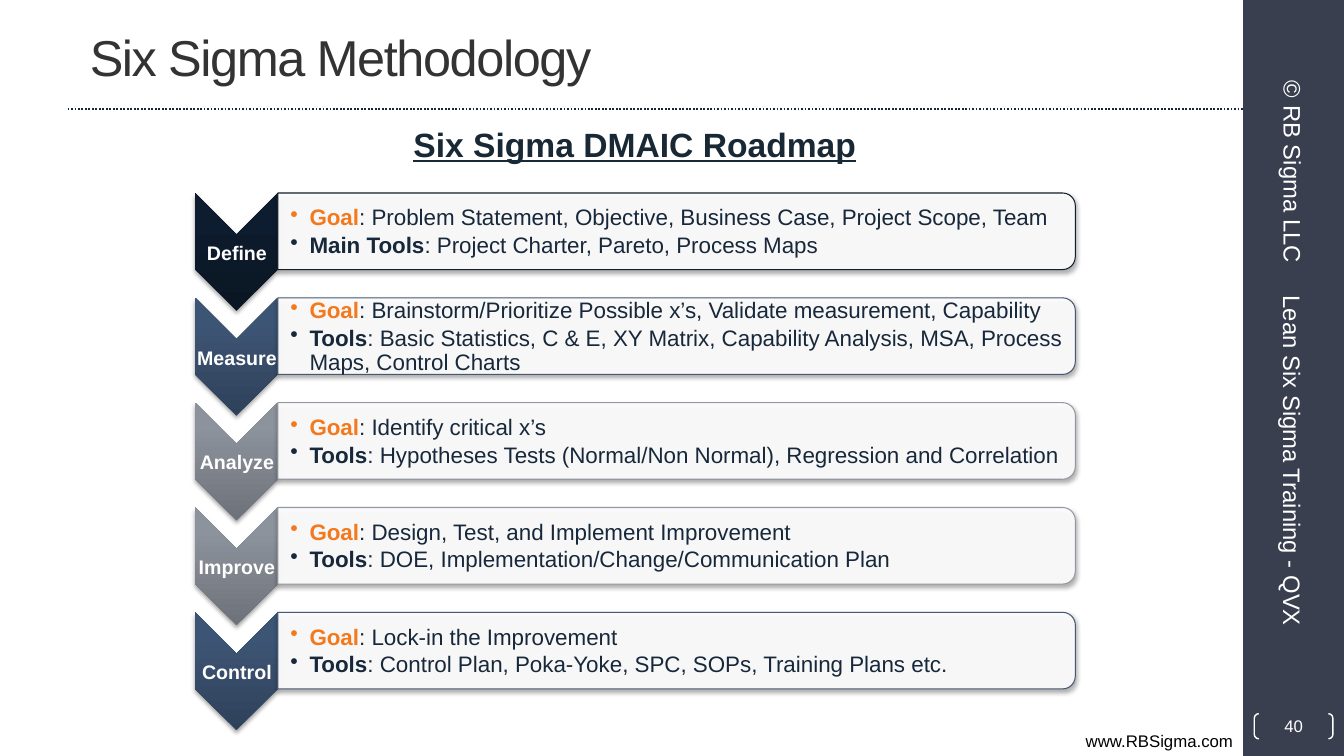
from lxml import etree
from pptx import Presentation
from pptx.dml.color import RGBColor
from pptx.enum.dml import MSO_LINE
from pptx.enum.shapes import MSO_CONNECTOR, MSO_SHAPE as SHAPE
from pptx.enum.text import MSO_ANCHOR as ANCHOR, PP_ALIGN as ALIGN
from pptx.oxml import parse_xml
from pptx.oxml.ns import nsdecls, qn
from pptx.util import Inches, Pt

COLORS = {
    "white": "FFFFFF", "black": "000000", "sidebar": "393F4E", "rule": "17273B",
    "title": "333333", "heading": "182835", "goal": "F4791D", "body": "18283B",
}

# Chevron gradient stops at 0, 80 and 100 percent, then the card outline
THEMES = {
    "navy": (("0A1623", "0D1C2E", "0D1C2F"), "121E2C"),
    "blue": (("2F415A", "3D5575", "3D5577"), "465872"),
    "gray": (("6D7179", "8D939D", "8E949E"), "9498A0"),
}

# Phase, theme, goal, tools label, tools
PHASES = [
    ("Define", "navy", "Problem Statement, Objective, Business Case, Project Scope, Team",
     "Main Tools", "Project Charter, Pareto, Process Maps"),
    ("Measure", "blue", "Brainstorm/Prioritize Possible x’s, Validate measurement, Capability",
     "Tools", "Basic Statistics, C & E, XY Matrix, Capability Analysis, MSA, Process Maps, Control Charts"),
    ("Analyze", "gray", "Identify critical x’s",
     "Tools", "Hypotheses Tests (Normal/Non Normal), Regression and Correlation"),
    ("Improve", "gray", "Design, Test, and Implement Improvement",
     "Tools", "DOE, Implementation/Change/Communication Plan"),
    ("Control", "blue", "Lock-in the Improvement",
     "Tools", "Control Plan, Poka-Yoke, SPC, SOPs, Training Plans etc."),
]
PHASE_PITCH = 1.04


def rgb(color):
    return RGBColor.from_string(COLORS.get(color, color))


def add_run(paragraph, text, size, color, **font_format):
    run = paragraph.add_run()
    run.text = text
    run.font.color.rgb = rgb(color)
    for name, value in {"name": "Arial", "size": Pt(size), **font_format}.items():
        setattr(run.font, name, value)
    return run


def set_frame(shape, anchor, margins):
    frame = shape.text_frame
    frame.word_wrap = True
    frame.vertical_anchor = anchor
    for side, margin in zip(("left", "top", "right", "bottom"), margins):
        setattr(frame, f"margin_{side}", Inches(margin))
    return frame


def add_box(slide, box, anchor=ANCHOR.MIDDLE, margins=(0.1, 0.05, 0.1, 0.05), rotation=0):
    shape = slide.shapes.add_textbox(*map(Inches, box))
    shape.rotation = rotation
    return set_frame(shape, anchor, margins)


def add_label(slide, box, text, size, color, align=ALIGN.LEFT, bold=False, underline=False, **frame_format):
    paragraph = add_box(slide, box, **frame_format).paragraphs[0]
    paragraph.alignment = align
    return add_run(paragraph, text, size, color, bold=bold, underline=underline)


def add_shape(slide, kind, box, fill=None, line=None, line_width=1, rotation=0):
    shape = slide.shapes.add_shape(kind, *map(Inches, box))
    shape.shadow.inherit = False
    shape.rotation = rotation
    if fill:
        shape.fill.solid()
        shape.fill.fore_color.rgb = rgb(fill)
    else:
        shape.fill.background()
    if line:
        shape.line.color.rgb = rgb(line)
        shape.line.width = Pt(line_width)
    else:
        shape.line.fill.background()
    return shape


def add_soft_shadow(shape):
    effects = shape._element.spPr.find(qn("a:effectLst"))
    effects.append(parse_xml(
        f'<a:outerShdw {nsdecls("a")} blurRad="40000" dist="23000" dir="5400000" rotWithShape="0">'
        '<a:srgbClr val="000000"><a:alpha val="35000"/></a:srgbClr></a:outerShdw>'))


def set_gradient(shape, colors):
    stops = "".join(f'<a:gs pos="{position}"><a:srgbClr val="{color}"/></a:gs>'
                    for position, color in zip((0, 80000, 100000), colors))
    properties = shape._element.spPr
    properties.replace(properties.find(qn("a:noFill")), parse_xml(
        f'<a:gradFill {nsdecls("a")} rotWithShape="0"><a:gsLst>{stops}</a:gsLst>'
        '<a:lin ang="16200000" scaled="0"/></a:gradFill>'))


def add_bullet(paragraph, label, label_color, text):
    properties = paragraph._p.get_or_add_pPr()
    properties.set("marL", str(Inches(0.19)))
    properties.set("indent", str(-Inches(0.19)))
    etree.SubElement(properties, qn("a:buChar")).set("char", "•")
    paragraph.level = 1
    paragraph.line_spacing = 0.9
    paragraph.space_after = Pt(2.4)
    add_run(paragraph, label, 16, label_color, bold=True)
    add_run(paragraph, f": {text}", 16, "body", bold=False)


def add_phase(slide, offset, phase, theme, goal, tools_label, tools):
    gradient, outline = THEMES[theme]
    # Chevron with its name
    chevron = add_shape(slide, SHAPE.CHEVRON, (1.76, 2.09 + offset, 1.17, 0.82), rotation=90)
    set_gradient(chevron, gradient)
    add_soft_shadow(chevron)
    add_label(slide, (1.94, 2.33 + offset, 0.82, 0.35), phase, 14, "white",
              ALIGN.CENTER, bold=True, margins=(0.01,) * 4)
    # Card with the goal and tools
    card = add_shape(slide, SHAPE.ROUND_2_SAME_RECTANGLE, (6.33, -1.66 + offset, 0.76, 7.91),
                     "white", outline, 0.75, rotation=90)
    fill_color = card._element.spPr.find(qn("a:solidFill"))[0]
    etree.SubElement(fill_color, qn("a:alpha")).set("val", "90000")
    add_soft_shadow(card)
    frame = add_box(slide, (2.76, 1.96 + offset, 7.87, 0.69), margins=(0.12, 0.01, 0.01, 0.01))
    add_bullet(frame.paragraphs[0], "Goal", "goal", goal)
    add_bullet(frame.add_paragraph(), tools_label, "body", tools)


def add_rule(slide):
    rule = slide.shapes.add_connector(MSO_CONNECTOR.STRAIGHT, *map(Inches, (0.67, 1.08, 12.33, 1.08)))
    rule.line.color.rgb = rgb("rule")
    rule.line.width = Pt(1.25)
    rule.line.dash_style = MSO_LINE.ROUND_DOT
    etree.SubElement(rule._element.spPr, qn("a:effectLst"))


def add_page_number(slide, number):
    bracket = add_shape(slide, SHAPE.DOUBLE_BRACKET, (12.44, 7.08, 0.78, 0.25), line="white")
    bracket.adjustments[0] = 0.18
    paragraph = set_frame(bracket, ANCHOR.MIDDLE, (0,) * 4).paragraphs[0]
    paragraph.alignment = ALIGN.CENTER
    add_run(paragraph, number, 12, "white")


def main():
    presentation = Presentation()
    presentation.slide_width = Inches(13.33)
    presentation.slide_height = Inches(7.5)
    slide = presentation.slides.add_slide(presentation.slide_layouts[6])

    # Frame of the page
    add_shape(slide, SHAPE.RECTANGLE, (12.33, 0, 1, 7.5), "sidebar")
    add_rule(slide)
    add_label(slide, (0, 7.2, 12.33, 0.3), "www.RBSigma.com", 12, "black", ALIGN.RIGHT, anchor=ANCHOR.TOP)

    # Title and heading
    title = add_label(slide, (0.67, 0.03, 11.11, 1.05), "Six Sigma Methodology", 36, "title",
                      margins=(0.22, 0.05, 0.1, 0.05))
    title.font._element.set("spc", "-100")
    add_label(slide, (1.67, 1.18, 9.25, 0.5), "Six Sigma DMAIC Roadmap", 24, "heading",
              ALIGN.CENTER, bold=True, underline=True, anchor=ANCHOR.TOP)

    # Roadmap
    for index, phase in enumerate(PHASES):
        add_phase(slide, index * PHASE_PITCH, *phase)

    # Sidebar text and page number
    add_label(slide, (10.86, 4.53, 3.92, 0.53), "Lean Six Sigma Training - QVX", 17, "white", rotation=90)
    add_label(slide, (11.7, 1.44, 2.25, 0.53), "© RB Sigma LLC", 17, "white", ALIGN.CENTER, rotation=90)
    add_page_number(slide, "40")

    presentation.save("out.pptx")


if __name__ == "__main__":
    main()
